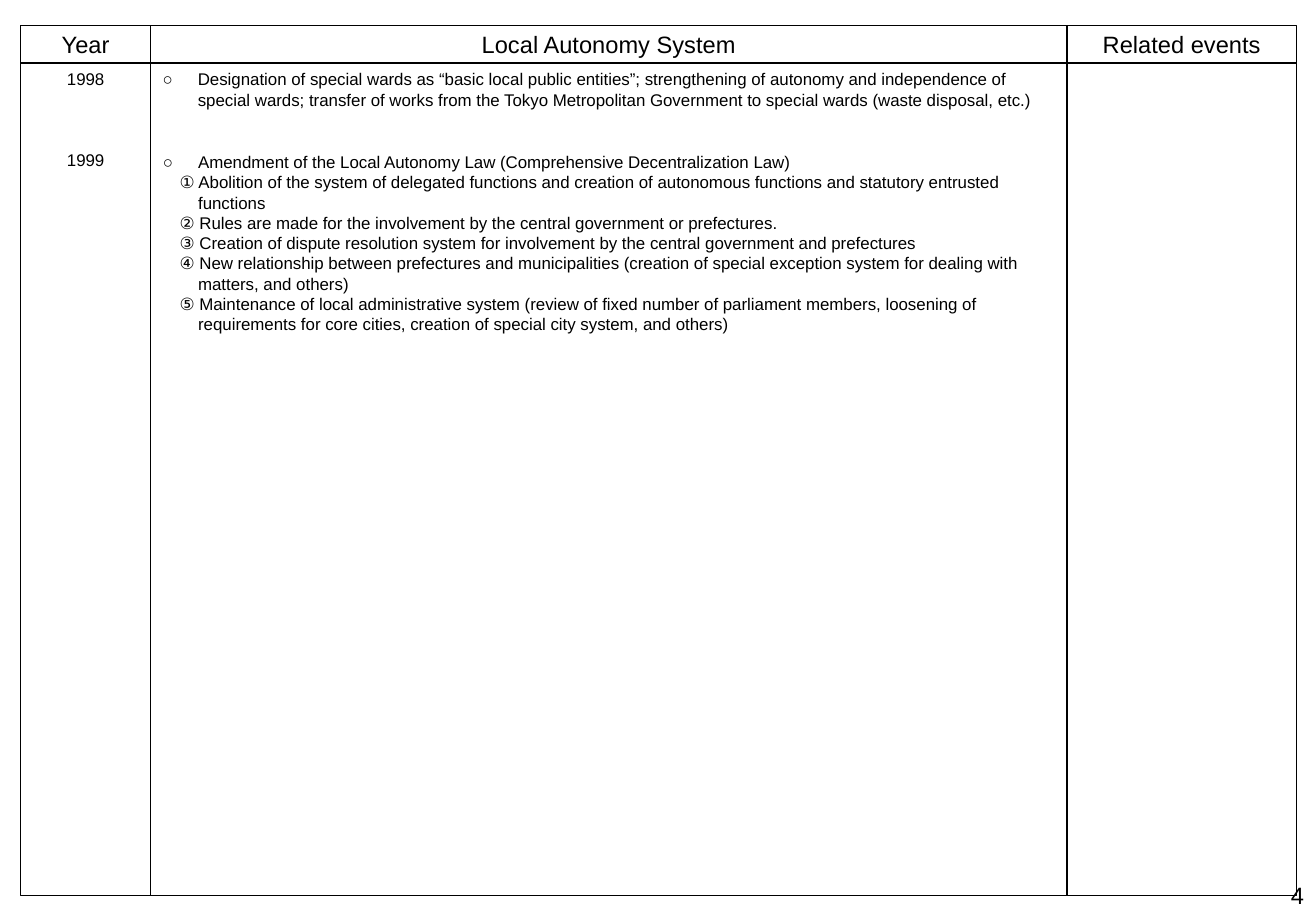
from pptx import Presentation
from pptx.dml.color import RGBColor
from pptx.enum.shapes import MSO_SHAPE as SHAPE
from pptx.enum.text import MSO_ANCHOR as ANCHOR, MSO_AUTO_SIZE as AUTO, PP_ALIGN as ALIGN
from pptx.oxml.ns import qn
from pptx.util import Inches, Pt
from lxml import etree

BLACK = RGBColor(0, 0, 0)
COLS = [0.17, 1.24, 8.78, 10.67]   # column edges, inches
ROWS = [0.21, 0.52, 7.37]          # header top, body top, body bottom
HANG = Inches(0.29)
HEAD = dict(size=Pt(14), name="Arial", bold=False)
BODY = dict(size=Pt(10), name="Arial", bold=False)

WARDS = ["○\tDesignation of special wards as “basic local public entities”; strengthening of "
         "autonomy and independence of special wards; transfer of works from the Tokyo "
         "Metropolitan Government to special wards (waste disposal, etc.)"]
LAW = [
    "○\tAmendment of the Local Autonomy Law (Comprehensive Decentralization Law)",
    "① Abolition of the system of delegated functions and creation of autonomous functions "
    "and statutory entrusted functions",
    "② Rules are made for the involvement by the central government or prefectures.",
    "③ Creation of dispute resolution system for involvement by the central government "
    "and prefectures",
    "④ New relationship between prefectures and municipalities (creation of special "
    "exception system for dealing with matters, and others)",
    "⑤ Maintenance of local administrative system (review of fixed number of parliament "
    "members, loosening of requirements for core cities, creation of special city system, "
    "and others)",
]


def place(sp, left, top, right, bottom):
    box = dict(left=left, top=top, width=right - left, height=bottom - top)
    for key, value in box.items():
        setattr(sp, key, Inches(value))


def outline(sp):
    sp.fill.background()
    sp.line.color.rgb = BLACK
    sp.line.width = Pt(0.75)


def write(sp, lines, font, align=ALIGN.LEFT, anchor=ANCHOR.TOP, gap=0):
    """Fill sp with one paragraph per line, gap points apart."""
    tf = sp.text_frame
    frame = dict(word_wrap=True, auto_size=AUTO.NONE, vertical_anchor=anchor)
    for key, value in frame.items():
        setattr(tf, key, value)
    for i, line in enumerate(lines):
        p = tf.paragraphs[0] if i == 0 else tf.add_paragraph()
        p.alignment = align
        p.space_before = Pt(gap if i else 0)
        if font is BODY:
            p.line_spacing = Pt(12)
        r = p.add_run()
        r.text = line
        for key, value in font.items():
            setattr(r.font, key, value)
        r.font.color.rgb = BLACK


def hang(sp):
    """Hang each paragraph; numbered ones start further in than ○ ones."""
    for p in sp.text_frame.paragraphs:
        pPr = p._p.get_or_add_pPr()
        first = HANG if p.text.startswith("○") else HANG - Pt(10)
        pPr.set("marL", str(HANG))
        pPr.set("indent", str(-first))
        etree.SubElement(pPr, qn("a:buNone"))


def add_cell(s, col, row):
    sp = s.shapes.add_shape(SHAPE.RECTANGLE, 0, 0, 0, 0)
    sp.shadow.inherit = False
    place(sp, COLS[col], ROWS[row], COLS[col + 1], ROWS[row + 1])
    outline(sp)
    return sp


def main():
    prs = Presentation()
    prs.slide_width, prs.slide_height = Inches(10.83), Inches(7.5)
    s = prs.slides.add_slide(prs.slide_layouts[1])
    title, law = s.placeholders

    years, wards, _ = [add_cell(s, col, 1) for col in range(3)]
    write(years, ["1998", "1999"], BODY, ALIGN.CENTER, gap=36)
    write(wards, WARDS, BODY)
    hang(wards)

    place(title, COLS[1], ROWS[0], COLS[2], ROWS[1])
    outline(title)
    heads = [add_cell(s, 0, 0), title, add_cell(s, 2, 0)]
    for sp, text in zip(heads, ["Year", "Local Autonomy System", "Related events"]):
        write(sp, [text], HEAD, ALIGN.CENTER, ANCHOR.MIDDLE)

    place(law, COLS[1], 1.2, COLS[2], 5.29)
    write(law, LAW, BODY)
    hang(law)

    number = s.shapes.add_textbox(0, 0, 0, 0)
    place(number, 8.3, 7.24, 10.83, 7.5)
    write(number, ["4"], HEAD, ALIGN.RIGHT, ANCHOR.MIDDLE)

    prs.save("out.pptx")


if __name__ == "__main__":
    main()
